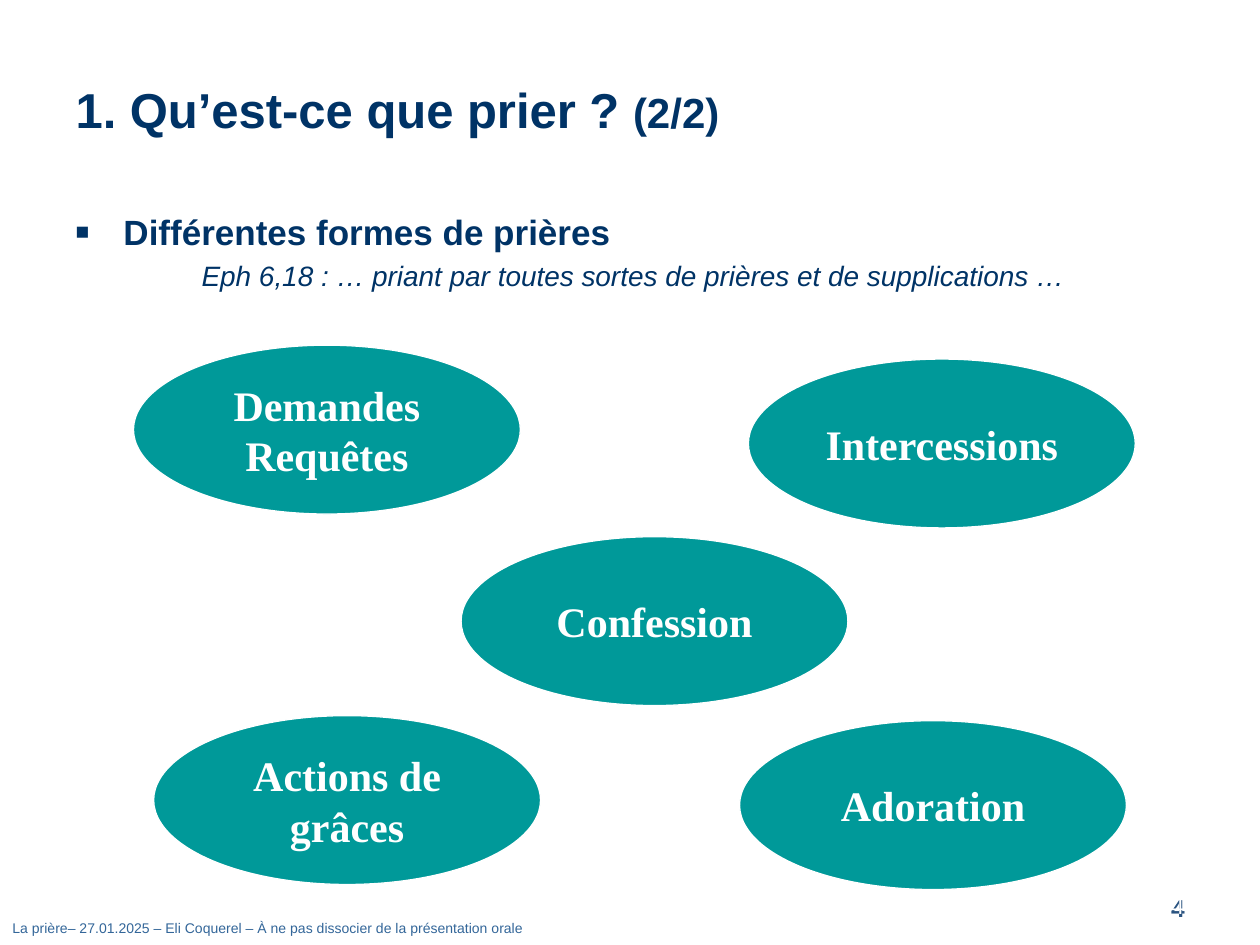
from dataclasses import dataclass

from lxml.etree import SubElement
from pptx import Presentation
from pptx.dml.color import RGBColor
from pptx.enum.shapes import MSO_SHAPE
from pptx.enum.text import MSO_ANCHOR, MSO_AUTO_SIZE, PP_ALIGN
from pptx.oxml.ns import qn
from pptx.util import Inches, Pt

NAVY = RGBColor(0x00, 0x33, 0x66)
STEEL = RGBColor(0x33, 0x66, 0x99)
SLATE = RGBColor(0x2B, 0x54, 0x81)
TEAL = RGBColor(0x00, 0x99, 0x99)
WHITE = RGBColor(0xFF, 0xFF, 0xFF)

PRAYERS = [
    ("Demandes\nRequêtes", 10.6, 36.53),
    ("Intercessions", 59.4, 38),
    ("Confession", 36.6, 56.8),
    ("Actions de grâces", 12.2, 75.73),
    ("Adoration", 58.7, 76.27),
]


@dataclass
class PrayerSlide:
    """Draw styled elements on one page, with lengths in percent of its size."""

    deck: object
    page: object
    sans: str = "Arial"
    serif: str = "Times New Roman"

    def area(self, left, top, width, height):
        across, down = self.deck.slide_width / 100, self.deck.slide_height / 100
        return [round(length) for length in (left * across, top * down, width * across, height * down)]

    def place(self, box, *share):
        box.left, box.top, box.width, box.height = self.area(*share)
        frame = box.text_frame
        frame.auto_size = MSO_AUTO_SIZE.NONE
        frame.vertical_anchor = MSO_ANCHOR.TOP
        return frame

    def style(self, para, size, color, font=None, bold=False, italic=False, align=PP_ALIGN.LEFT):
        para.alignment = align
        for span in para.runs:
            span.font.name = font or self.sans
            span.font.size = Pt(size)
            span.font.bold = bold
            span.font.italic = italic
            span.font.color.rgb = color

    def title(self, heading, counter, *share):
        para = self.place(self.page.shapes.title, *share).paragraphs[0]
        para.text = heading
        para.add_run().text = counter
        self.style(para, 28, NAVY, bold=True)
        para.runs[1].font.size = Pt(24)

    def body(self, topic, verse, *share):
        frame = self.place(self.page.placeholders[1], *share)
        frame.text = f"{topic}\n{verse}"
        first, second = frame.paragraphs
        self.style(first, 20, NAVY, bold=True)
        self.indent(first, 0.38, -0.38)
        SubElement(first._p.pPr, qn("a:buSzPct"), val="65000")
        SubElement(first._p.pPr, qn("a:buChar"), char="■")
        second.level = 2
        self.style(second, 16, NAVY, italic=True)
        self.indent(second, 1.25, -0.25)
        SubElement(second._p.pPr, qn("a:buNone"))

    def indent(self, para, margin, hanging):
        properties = para._p.get_or_add_pPr()
        properties.set("marL", str(Inches(margin)))
        properties.set("indent", str(Inches(hanging)))

    def label(self, text, share, size, color, anchor=MSO_ANCHOR.TOP, **look):
        frame = self.page.shapes.add_textbox(*self.area(*share)).text_frame
        frame.word_wrap = True
        frame.vertical_anchor = anchor
        frame.text = text
        self.style(frame.paragraphs[0], size, color, **look)

    def ellipse(self, text, left, top):
        oval = self.page.shapes.add_shape(MSO_SHAPE.OVAL, *self.area(left, top, 30.7, 17.87))
        oval.shadow.inherit = False
        oval.fill.solid()
        oval.fill.fore_color.rgb = TEAL
        oval.line.color.rgb = WHITE
        oval.line.width = Pt(0.75)
        oval.text_frame.text = text
        oval.text_frame.vertical_anchor = MSO_ANCHOR.MIDDLE
        for para in oval.text_frame.paragraphs:
            self.style(para, 24, WHITE, font=self.serif, bold=True, align=PP_ALIGN.CENTER)


def main():
    deck = Presentation()
    deck.slide_width, deck.slide_height = Inches(10), Inches(7.5)
    slide = PrayerSlide(deck, deck.slides.add_slide(deck.slide_layouts[1]))
    slide.label("La prière– 27.01.2025 – Eli Coquerel – À ne pas dissocier de la présentation orale",
                (0, 96.67, 59.1, 3.2), 8, STEEL)
    slide.label("4", (87.8, 93.87, 7.2, 4.53), 14, SLATE, bold=True, align=PP_ALIGN.RIGHT)
    slide.label("4", (71.7, 91.07, 23.3, 6.93), 14, WHITE, MSO_ANCHOR.BOTTOM, align=PP_ALIGN.RIGHT)
    slide.title("1. Qu’est-ce que prier ? ", "(2/2)", 5, 7.73, 93.8, 11.07)
    slide.body("Différentes formes de prières",
               "Eph 6,18 : … priant par toutes sortes de prières et de supplications …",
               5, 21.6, 91.5, 73.47)
    for prayer in PRAYERS:
        slide.ellipse(*prayer)
    deck.save("out.pptx")


if __name__ == "__main__":
    main()
